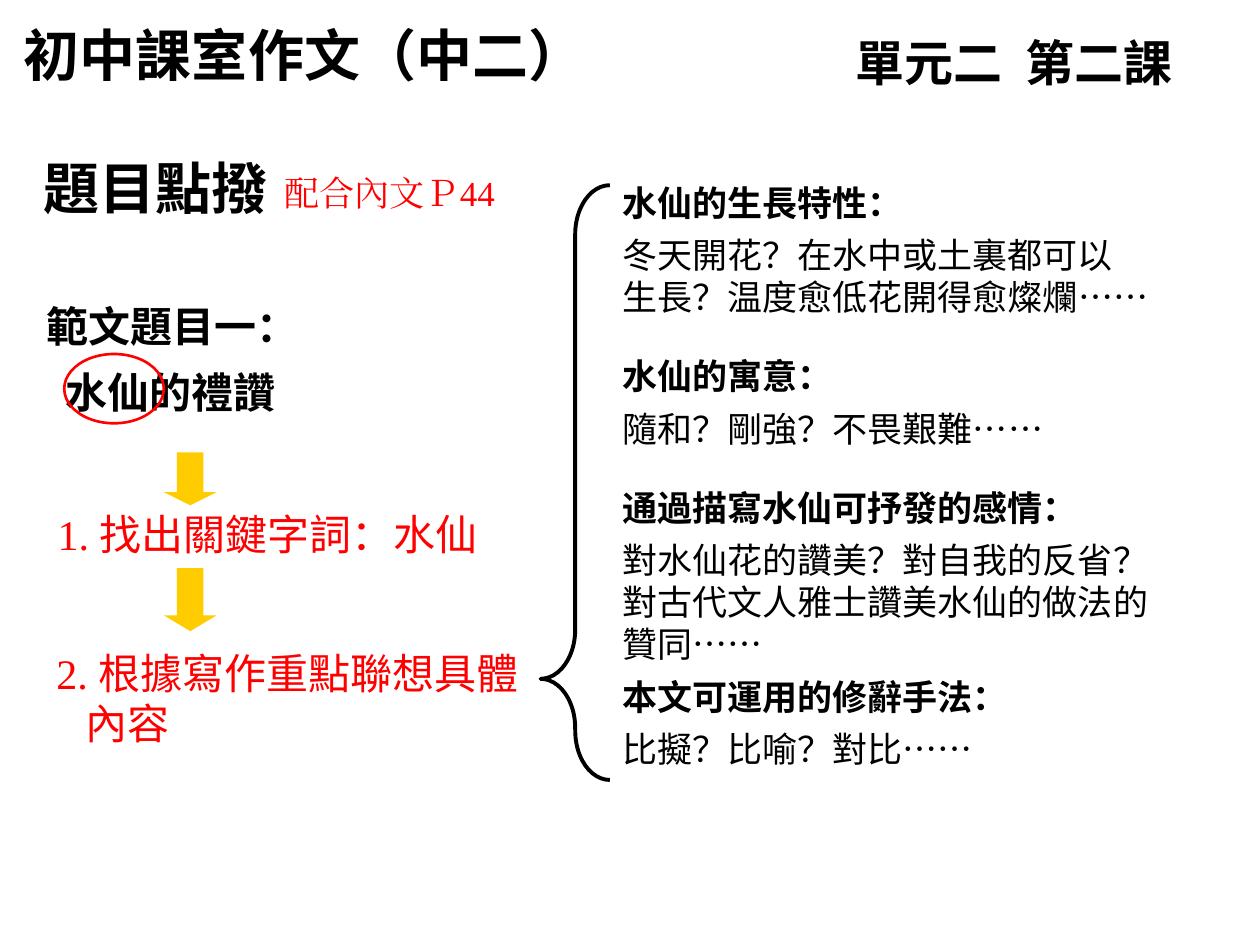
from pptx import Presentation
from pptx.dml.color import RGBColor
from pptx.enum.shapes import MSO_SHAPE as Shape
from pptx.enum.text import MSO_ANCHOR as Anchor, MSO_AUTO_SIZE as AutoSize, PP_ALIGN as Align
from pptx.oxml.ns import qn
from pptx.util import Inches, Pt

BLACK, RED, GOLD = "000000", "FF0000", "FFCC00"
SANS, SERIF, CJK = "DejaVu Sans", "Times New Roman", "Noto Sans CJK SC"


def color(value):
    return RGBColor.from_string(value)


class SlideBuilder:
    def __init__(self, page):
        self.page = page

    def frame(self, box, at):
        """Place a text-bearing box and return its prepared text frame."""
        box.left, box.top, box.width, box.height = map(Inches, at)
        text_frame = box.text_frame
        text_frame.word_wrap = True
        text_frame.auto_size = AutoSize.NONE
        text_frame.vertical_anchor = Anchor.TOP
        return text_frame

    def text_box(self, at):
        return self.frame(self.page.shapes.add_textbox(0, 0, 0, 0), at)

    def add_text(self, para, text, size, font=SANS, fill=BLACK, bold=False):
        """Append styled text to a paragraph, turning newlines into line breaks."""
        for number, line in enumerate(text.split("\n")):
            if number:
                para.add_line_break()
            span = para.add_run()
            span.text = line
            span.font.name = font
            span.font.size = Pt(size)
            span.font.bold = bold
            span.font.color.rgb = color(fill)
            latin = span.font._element.find(qn("a:latin"))
            east_asian = latin.makeelement(qn("a:ea"), {"typeface": font})
            latin.addnext(east_asian)

    def title(self, text, at, size, font):
        para = self.frame(self.page.shapes.title, at).paragraphs[0]
        para.alignment = Align.LEFT
        self.add_text(para, text, size, font, bold=True)

    def label(self, text, at, size, font, fill=BLACK, bold=False):
        self.add_text(self.text_box(at).paragraphs[0], text, size, font, fill, bold)

    def shape(self, kind, at, fill=None, line=None, width=0, adjust=()):
        shape = self.page.shapes.add_shape(kind, *map(Inches, at))
        shape.shadow.inherit = False
        for number, value in enumerate(adjust):
            shape.adjustments[number] = value
        if fill:
            shape.fill.solid()
            shape.fill.fore_color.rgb = color(fill)
        else:
            shape.fill.background()
        if line:
            shape.line.color.rgb = color(line)
            shape.line.width = Pt(width)
        else:
            shape.line.fill.background()

    def indent(self, para, inches):
        para._p.get_or_add_pPr().set("marL", str(Inches(inches)))

    def topic(self, lines, at):
        text_frame = self.text_box(at)
        for number, line in enumerate(lines):
            para = text_frame.add_paragraph() if number else text_frame.paragraphs[0]
            para.line_spacing = 1.3
            self.indent(para, 0.15 * number)
            self.add_text(para, line, 24, bold=True)

    def step(self, number, lines, at):
        text_frame = self.text_box(at)
        para = text_frame.paragraphs[0]
        self.add_text(para, f"{number}. ", 24, SERIF, RED)
        self.add_text(para, lines[0], 24, SANS, RED)
        for line in lines[1:]:
            para = text_frame.add_paragraph()
            self.indent(para, 0.23)
            self.add_text(para, line, 24, SANS, RED)

    def ideas(self, sections, at):
        """Add headed ideas; each section is heading, answer, space before, answer font."""
        text_frame = self.text_box(at)
        for number, (heading, answer, space, font) in enumerate(sections):
            para = text_frame.add_paragraph() if number else text_frame.paragraphs[0]
            if number:
                para.space_before = Pt(space)
            self.add_text(para, heading, 20, bold=True)
            para = text_frame.add_paragraph()
            para.space_before = Pt(6)
            self.add_text(para, answer, 20, font)
            self.add_text(para, "……", 20, CJK)


def main():
    deck = Presentation()
    deck.slide_width, deck.slide_height = Inches(10), Inches(7.5)
    slide = SlideBuilder(deck.slides.add_slide(deck.slide_layouts[5]))

    slide.title("初中課室作文（中二）", (0.09, 0.11, 5.22, 0.63), 32, "Lato")
    slide.label("單元二  第二課", (6.69, 0.21, 3.35, 0.57), 28, "Lato", bold=True)
    slide.label("題目點撥", (0.25, 1.17, 3.08, 0.63), 32, "Arial", bold=True)
    slide.label("配合內文Ｐ44", (2.16, 1.31, 2.47, 0.43), 20, SERIF, RED)

    slide.topic(["範文題目一：", "水仙的禮讚"], (0.27, 2.22, 5, 1.14))
    slide.shape(Shape.OVAL, (0.51, 2.81, 0.79, 0.55), line=RED, width=1.5)

    for top, height, head in [(3.59, 0.42, 0.25), (4.51, 0.5, 0.3)]:
        slide.shape(Shape.DOWN_ARROW, (1.3, top, 0.42, height), GOLD, adjust=(0.5, head))
    slide.step(1, ["找出關鍵字詞：水仙"], (0.36, 3.99, 4.08, 0.5))
    slide.step(2, ["根據寫作重點聯想具體", "內容"], (0.35, 5.09, 4.17, 0.9))

    slide.shape(Shape.LEFT_BRACE, (4.29, 1.47, 0.55, 4.72), line=BLACK, width=2.25,
                adjust=(0.71, 0.83))
    slide.ideas([
        ("水仙的生長特性：", "冬天開花？在水中或土裏都可以\n生長？温度愈低花開得愈燦爛", 0, SANS),
        ("水仙的寓意：", "隨和？剛強？不畏艱難", 21, SANS),
        ("通過描寫水仙可抒發的感情：",
         "對水仙花的讚美？對自我的反省？\n對古代文人雅士讚美水仙的做法的\n贊同", 21, SANS),
        ("本文可運用的修辭手法：", "比擬？比喻？對比", 6, "Arial"),
    ], (4.84, 1.39, 4.72, 4.91))

    deck.save("out.pptx")


if __name__ == "__main__":
    main()
